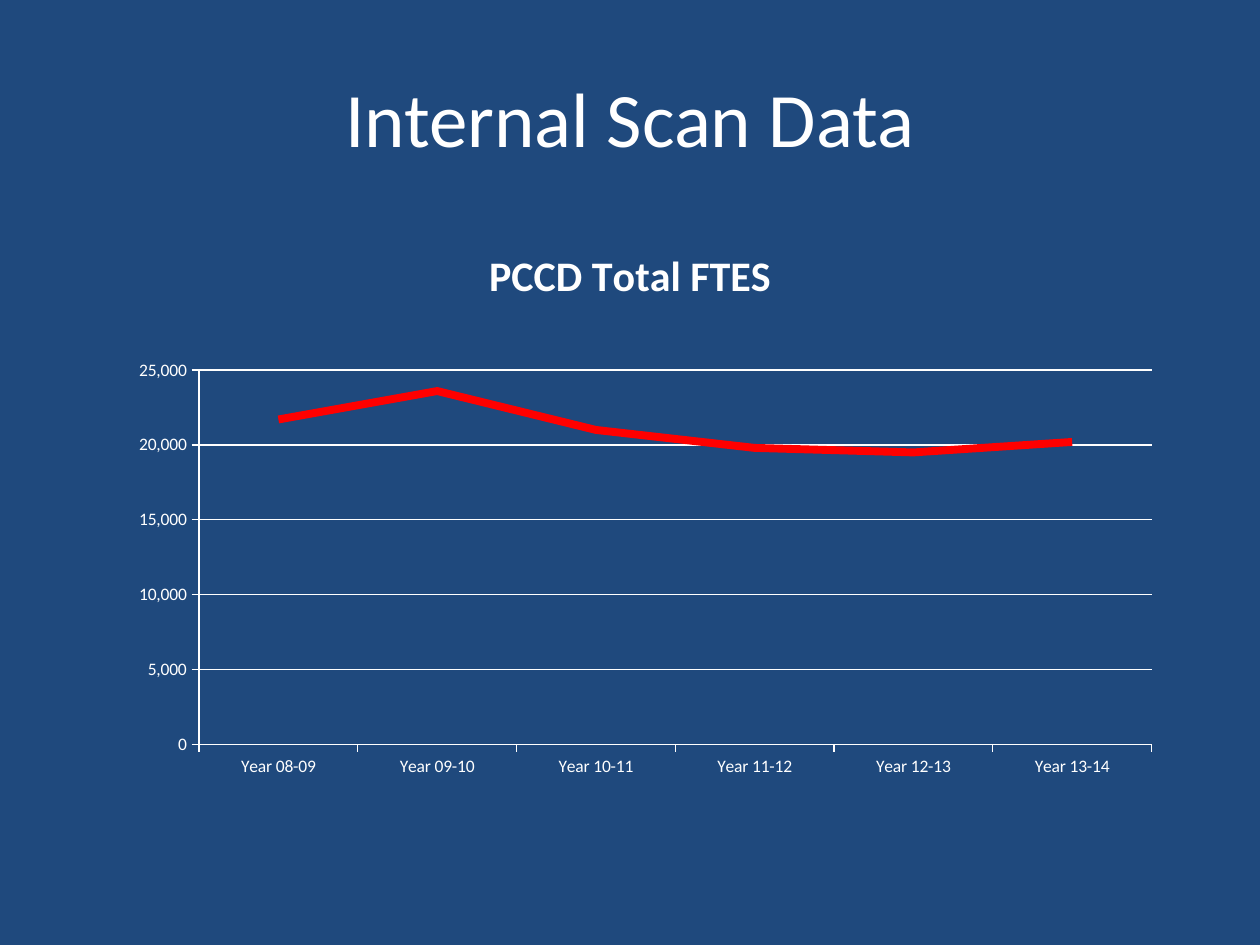
from lxml import etree
from pptx import Presentation
from pptx.chart.data import CategoryChartData
from pptx.dml.color import RGBColor
from pptx.enum import chart as chart_enum, text
from pptx.oxml import parse_xml
from pptx.oxml.ns import nsdecls
from pptx.util import Inches, Pt

# Content
TITLE = "Internal Scan Data"
CHART_TITLE = "PCCD Total FTES"
FTES = {
    "Year 08-09": 21700,
    "Year 09-10": 23600,
    "Year 10-11": 21000,
    "Year 11-12": 19800,
    "Year 12-13": 19500,
    "Year 13-14": 20200,
}
COLORS = {"background": "1F497D", "text": "FFFFFF", "series": "FF0000"}
FONT = "Calibri"
PLOT_AREA = {"x": 0.12, "y": 0.24, "w": 0.84, "h": 0.6}  # shares of the chart


def color(name):
    return RGBColor.from_string(COLORS[name])


def style_font(font, size, bold=False):
    font.name, font.size, font.bold = FONT, Pt(size), bold
    font.color.rgb = color("text")


def style_line(line, name, width):
    line.color.rgb = color(name)
    line.width = Pt(width)


def place_plot_area(chart):
    plot_area = chart.plots[0]._element.getparent()
    for layout in plot_area.findall("{*}layout"):
        plot_area.remove(layout)
    layout = parse_xml(
        f'<c:layout {nsdecls("c")}><c:manualLayout><c:layoutTarget val="inner"/>'
        '<c:xMode val="edge"/><c:yMode val="edge"/></c:manualLayout></c:layout>'
    )
    for key, value in PLOT_AREA.items():
        tag = layout.nsmap["c"]
        etree.SubElement(layout[0], f"{{{tag}}}{key}").set("val", str(value))
    plot_area.insert(0, layout)


# Slide
presentation = Presentation()
presentation.slide_width, presentation.slide_height = Inches(10), Inches(7.5)
slide = presentation.slides.add_slide(presentation.slide_layouts[6])
slide.background.fill.solid()
slide.background.fill.fore_color.rgb = color("background")

# Title
title_box = slide.shapes.add_textbox(Inches(0.5), Inches(0.3), Inches(9), Inches(1.25))
frame = title_box.text_frame
frame.word_wrap = True
frame.vertical_anchor = text.MSO_ANCHOR.MIDDLE
paragraph = frame.paragraphs[0]
paragraph.text = TITLE
paragraph.alignment = text.PP_ALIGN.CENTER
style_font(paragraph.font, 44)

# Line chart
data = CategoryChartData(number_format="#,##0")
data.categories = list(FTES)
data.add_series("Series 1", list(FTES.values()))
chart = slide.shapes.add_chart(
    chart_enum.XL_CHART_TYPE.LINE,
    Inches(0.5), Inches(1.75), Inches(9), Inches(4.95), data,
).chart
style_font(chart.font, 10)
chart.has_legend = False
chart.has_title = True
chart.chart_title.include_in_layout = False
chart_title = chart.chart_title.text_frame.paragraphs[0]
chart_title.text = CHART_TITLE
style_font(chart_title.font, 24, bold=True)
place_plot_area(chart)

series = chart.plots[0].series[0]
series.smooth = False
series.marker.style = chart_enum.XL_MARKER_STYLE.NONE
style_line(series.format.line, "series", 4.5)

# Axes
for axis in (chart.category_axis, chart.value_axis):
    axis.major_tick_mark = chart_enum.XL_TICK_MARK.OUTSIDE
    axis.minor_tick_mark = chart_enum.XL_TICK_MARK.NONE
    style_line(axis.format.line, "text", 0.75)
value_axis = chart.value_axis
value_axis.minimum_scale, value_axis.maximum_scale = 0, 25000
value_axis.major_unit = 5000
value_axis.tick_labels.number_format = "#,##0"
value_axis.tick_labels.number_format_is_linked = False
value_axis.has_major_gridlines = True
style_line(value_axis.major_gridlines.format.line, "text", 0.75)

presentation.save("out.pptx")
